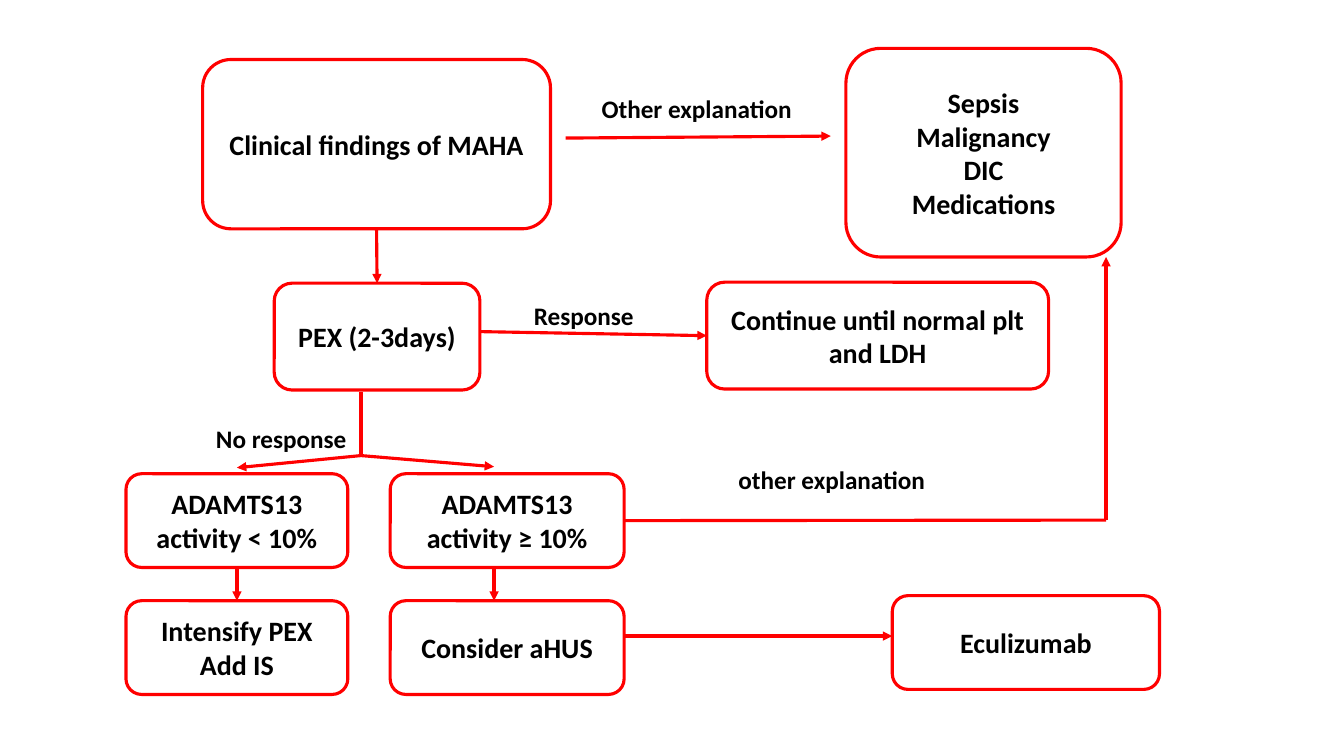
from lxml import etree
from pptx import Presentation
from pptx.dml.color import RGBColor
from pptx.enum.shapes import MSO_CONNECTOR, MSO_SHAPE
from pptx.enum.text import MSO_ANCHOR, PP_ALIGN
from pptx.oxml.ns import qn
from pptx.util import Pt

PX = 9144
RED = RGBColor(255, 0, 0)
BLACK = RGBColor(0, 0, 0)
WHITE = RGBColor(255, 255, 255)
ROUND = MSO_SHAPE.ROUNDED_RECTANGLE
LINE = MSO_CONNECTOR.STRAIGHT
CENTER = PP_ALIGN.CENTER
MIDDLE = MSO_ANCHOR.MIDDLE
TOP, LEFT, BOTTOM, RIGHT = range(4)


def write(frame, text, size=20, bold=True, color=BLACK, wrap=True):
    frame.word_wrap = wrap
    frame.vertical_anchor = MIDDLE
    for i, line in enumerate(text.split("\n")):
        para = frame.paragraphs[0] if i == 0 else frame.add_paragraph()
        para.alignment = CENTER
        run = para.add_run()
        run.text = line
        run.font.name = "Calibri"
        run.font.size = Pt(size)
        run.font.bold = bold
        run.font.color.rgb = color


def node(slide, text, x, y, w, h):
    shape = slide.shapes.add_shape(ROUND, x * PX, y * PX, w * PX, h * PX)
    shape.shadow.inherit = False
    shape.fill.solid()
    shape.fill.fore_color.rgb = WHITE
    shape.line.color.rgb = RED
    shape.line.width = Pt(2.25)
    write(shape.text_frame, text)
    return shape


def label(slide, text, x, y, w=220, h=36):
    box = slide.shapes.add_textbox(
        (x - w // 2) * PX, (y - h // 2) * PX, w * PX, h * PX)
    write(box.text_frame, text, size=18)


def link(slide, start, end, first=None, last=None, arrow=True):
    ends = [n * PX for n in start + end]
    line = slide.shapes.add_connector(LINE, *ends)
    line.line.color.rgb = RED
    line.line.width = Pt(2.25)
    if first:
        line.begin_connect(*first)
    if last:
        line.end_connect(*last)
    if arrow:
        etree.SubElement(line.line._get_or_add_ln(), qn("a:tailEnd"), type="triangle")
    etree.SubElement(line._element.spPr, qn("a:effectLst"))


def findings(slide, x, y, w, h):
    start = node(slide, "Clinical findings of MAHA", x, y + 11, 345, 168)
    node(slide, "Sepsis\nMalignancy\nDIC\nMedications", x + w - 273, y, 273, h)
    link(slide, (x + 360, y + 89), (x + 623, y + 87))
    label(slide, "Other explanation", x + 490, y + 60)
    return start


def therapy(slide, start, x, y, w, h):
    pex = node(slide, "PEX (2-3days)", x, y + 1, 204, h)
    goal = node(slide, "Continue until normal plt and LDH", x + w - 339, y, 339, h)
    mid = x + 102
    link(slide, (mid, y - 53), (mid, y + 1), (start, BOTTOM), (pex, TOP))
    link(slide, (x + 204, y + 49), (x + w - 339, y + h // 2), last=(goal, LEFT))
    label(slide, "Response", x + 307, y + 33)


def tests(slide, x, y, w, h):
    deep, next_y = 93, y + h - 93
    right, wide = x + 262, 232
    edge = right + wide
    low = node(slide, "ADAMTS13 activity < 10%", x, y, 220, deep)
    high = node(slide, "ADAMTS13 activity ≥ 10%", right, y, wide, deep)
    more = node(slide, "Intensify PEX\nAdd IS", x, next_y, 220, deep)
    node(slide, "Consider aHUS", right, next_y, wide, deep)
    node(slide, "Eculizumab", x + w - 265, next_y - 5, 265, deep)

    fork = (x + 233, y - 18)
    link(slide, (x + 233, y - 81), fork, arrow=False)
    for tip in ((x + 110, y - 6), (x + 365, y - 7)):
        link(slide, fork, tip)
    label(slide, "No response", x + 154, y - 35)

    link(slide, (x + 110, y + deep), (x + 110, next_y), (low, BOTTOM), (more, TOP))
    link(slide, (x + 365, y + deep), (x + 365, next_y))
    link(slide, (edge, next_y + 35), (x + w - 265, next_y + 35))
    turn = (x + 972, y + deep // 2)
    link(slide, (edge, turn[1]), turn, (high, RIGHT), arrow=False)
    link(slide, turn, (turn[0], y - 215))
    label(slide, "other explanation", x + 700, y + 6)


def main():
    deck = Presentation()
    deck.slide_width = 1333 * PX
    deck.slide_height = 750 * PX
    slide = deck.slides.add_slide(deck.slide_layouts[6])
    start = findings(slide, 201, 48, 911, 207)
    therapy(slide, start, 272, 280, 768, 106)
    tests(slide, 125, 470, 1025, 219)
    deck.save("out.pptx")


if __name__ == "__main__":
    main()
